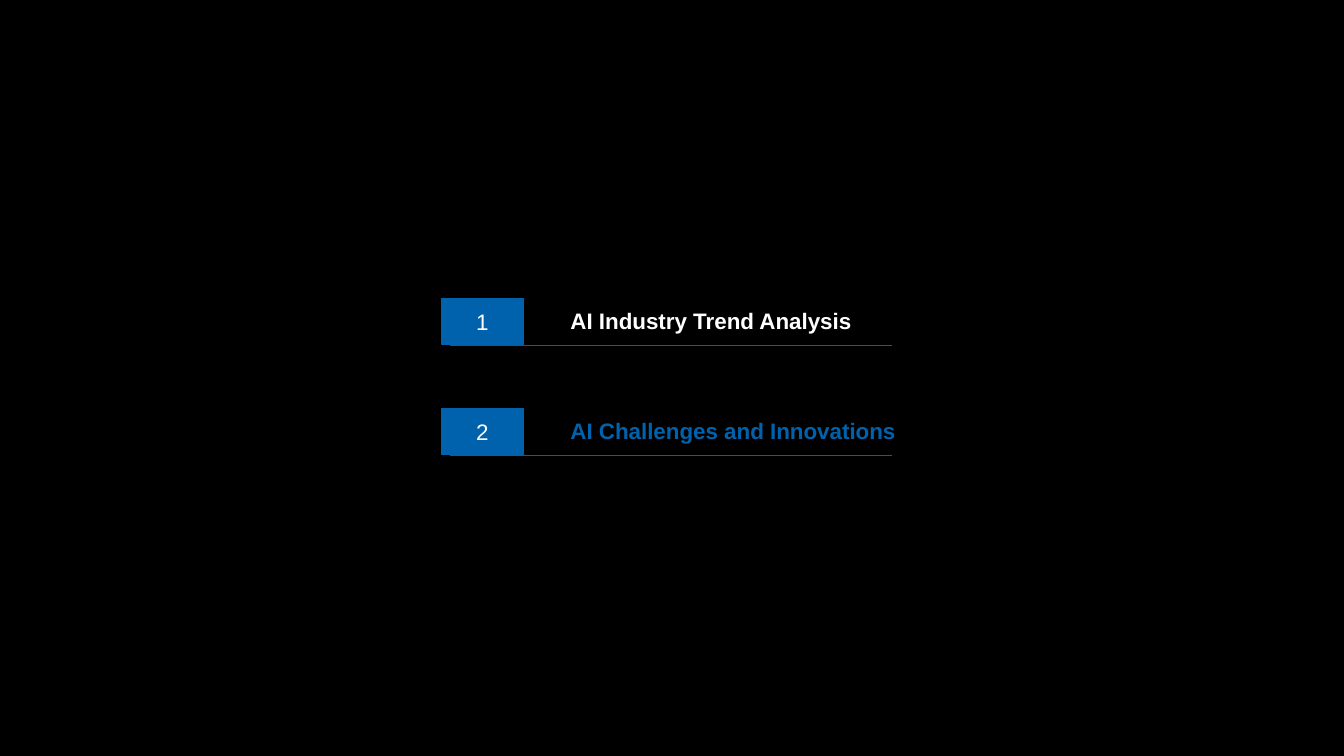
from pptx import Presentation
from pptx.dml.color import RGBColor
from pptx.enum.shapes import MSO_CONNECTOR, MSO_SHAPE
from pptx.enum.text import MSO_ANCHOR, MSO_AUTO_SIZE, PP_ALIGN
from pptx.util import Inches, Pt
from lxml.etree import SubElement
from pptx.oxml.ns import qn

BLACK = RGBColor(0x00, 0x00, 0x00)
WHITE = RGBColor(0xFF, 0xFF, 0xFF)
BLUE = RGBColor(0x00, 0x62, 0xAC)
RULE_BLUE = RGBColor(0x00, 0x60, 0xA8)

FIRST_TOP = 2.96
ROW_PITCH = 1.09

agenda = [
    ("AI Industry Trend Analysis", 3.02, WHITE),
    ("AI Challenges and Innovations", 3.53, BLUE),
]


def style_text(paragraph, color, bold):
    font = paragraph.runs[0].font
    font.name = "Arial"
    font.size = Pt(16)
    font.bold = bold
    font.color.rgb = color


presentation = Presentation()
presentation.slide_width = Inches(13.33)
presentation.slide_height = Inches(7.5)
slide = presentation.slides.add_slide(presentation.slide_layouts[6])
slide.background.fill.solid()
slide.background.fill.fore_color.rgb = BLACK

for index, (topic, topic_width, topic_color) in enumerate(agenda):
    top = FIRST_TOP + index * ROW_PITCH

    number = slide.shapes.add_shape(
        MSO_SHAPE.ROUNDED_RECTANGLE,
        Inches(4.38), Inches(top), Inches(0.81), Inches(0.46),
    )
    number.adjustments[0] = 0
    number.shadow.inherit = False
    number.fill.solid()
    number.fill.fore_color.rgb = BLUE
    number.line.color.rgb = BLUE
    number.line.width = Pt(0.75)
    number_frame = number.text_frame
    number_frame.margin_left = number_frame.margin_right = Inches(0.05)
    number_frame.margin_top = number_frame.margin_bottom = Inches(0.03)
    number_frame.vertical_anchor = MSO_ANCHOR.MIDDLE
    number_frame.text = str(index + 1)
    number_frame.paragraphs[0].alignment = PP_ALIGN.CENTER
    style_text(number_frame.paragraphs[0], WHITE, False)

    rule_y = Inches(top + 0.47)
    underline = slide.shapes.add_connector(
        MSO_CONNECTOR.STRAIGHT, Inches(4.46), rule_y, Inches(8.85), rule_y
    )
    underline.line.color.rgb = RULE_BLUE
    underline.line.width = Pt(0.75)
    SubElement(underline.element.spPr, qn("a:effectLst"))

    heading = slide.shapes.add_textbox(
        Inches(5.56), Inches(top + 0.04), Inches(topic_width), Inches(0.37)
    )
    heading_frame = heading.text_frame
    heading_frame.word_wrap = False
    heading_frame.auto_size = MSO_AUTO_SIZE.SHAPE_TO_FIT_TEXT
    heading_frame.text = topic
    style_text(heading_frame.paragraphs[0], topic_color, True)

presentation.save("out.pptx")
